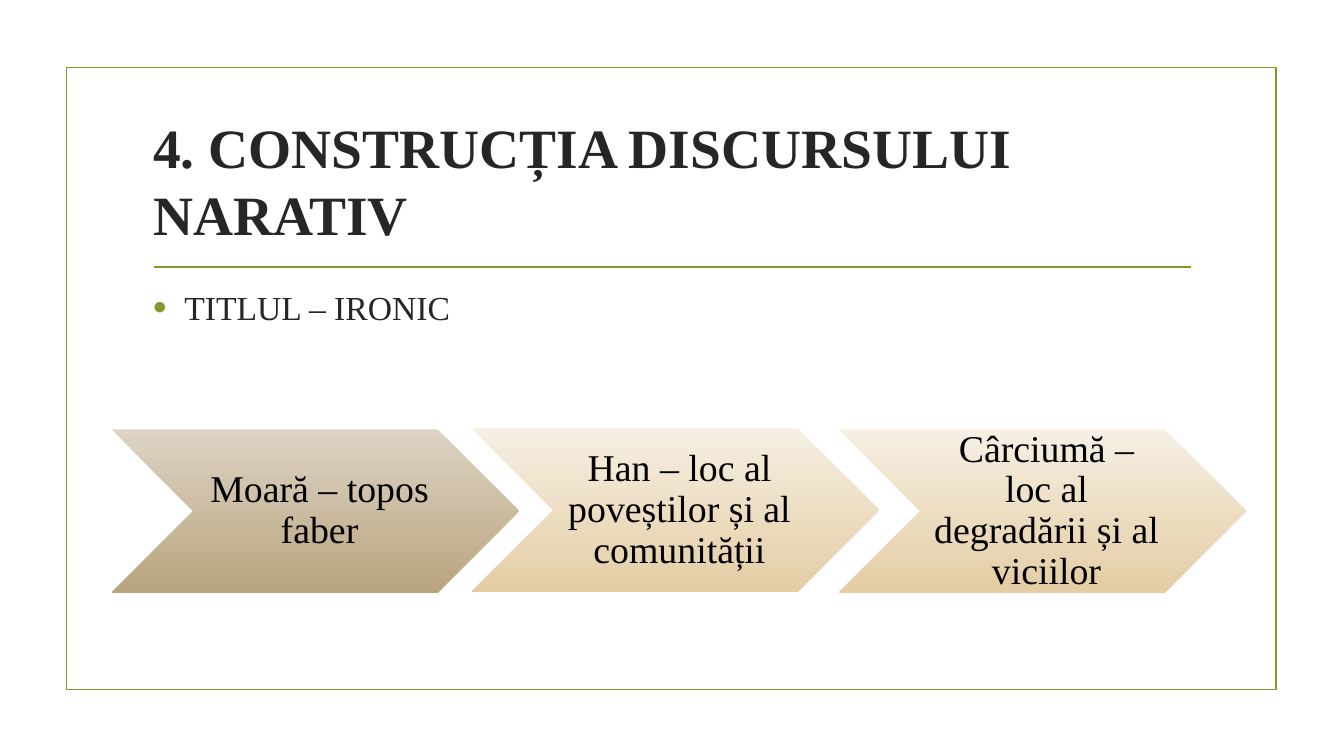
from lxml import etree
from pptx import Presentation
from pptx.dml.color import RGBColor
from pptx.enum.shapes import MSO_CONNECTOR, MSO_SHAPE
from pptx.enum.text import MSO_ANCHOR, PP_ALIGN
from pptx.oxml.ns import qn
from pptx.util import Inches, Pt

MIDDLE, TOP = MSO_ANCHOR.MIDDLE, MSO_ANCHOR.TOP
LEFT, CENTER = PP_ALIGN.LEFT, PP_ALIGN.CENTER
FONT = "Times New Roman"
GREEN, DARK, BLACK = "83992A", "262626", "000000"
TEXT_LEFT, TEXT_WIDTH = 1.42, 10.5
CHEVRON_WIDTH, CHEVRON_HEIGHT = 4.04, 1.62


def color(value):
    return RGBColor.from_string(value)


def write(shape, text, size, text_color, anchor, align, bold=False):
    frame = shape.text_frame
    frame.word_wrap = True
    frame.vertical_anchor = anchor
    frame.text = text
    paragraph = frame.paragraphs[0]
    paragraph.alignment = align
    font = paragraph.runs[0].font
    font.name, font.size, font.bold = FONT, Pt(size), bold
    font.color.rgb = color(text_color)
    return paragraph


presentation = Presentation()
presentation.slide_width = Inches(13.33)
presentation.slide_height = Inches(7.5)
slide = presentation.slides.add_slide(presentation.slide_layouts[6])
shapes = slide.shapes

border = shapes.add_shape(MSO_SHAPE.RECTANGLE, Inches(0.66), Inches(0.67), Inches(12), Inches(6.17))
border.shadow.inherit = False
border.fill.background()

divider = shapes.add_connector(MSO_CONNECTOR.STRAIGHT, Inches(1.53), Inches(2.65), Inches(11.81), Inches(2.65))
etree.SubElement(divider._element.spPr, qn("a:effectLst"))

for outlined in (border, divider):
    outlined.line.color.rgb = color(GREEN)
    outlined.line.width = Pt(1.25)

title = shapes.add_textbox(Inches(TEXT_LEFT), Inches(1.07), Inches(TEXT_WIDTH), Inches(1.43))
write(title, "4. CONSTRUCȚIA DISCURSULUI NARATIV", 39.6, DARK, MIDDLE, LEFT, True)

body = shapes.add_textbox(Inches(TEXT_LEFT), Inches(2.8), Inches(TEXT_WIDTH), Inches(3.63))
paragraph = write(body, "TITLUL – IRONIC", 24, DARK, TOP, LEFT)
paragraph.space_after = Pt(6)
properties = paragraph._p.get_or_add_pPr()
properties.set("marL", str(Inches(0.31)))
properties.set("indent", str(-Inches(0.31)))
bullet_color = etree.SubElement(properties, qn("a:buClr"))
etree.SubElement(bullet_color, qn("a:srgbClr"), val=GREEN)
etree.SubElement(properties, qn("a:buSzPct"), val="115000")
etree.SubElement(properties, qn("a:buFont"), typeface="Arial")
etree.SubElement(properties, qn("a:buChar"), char="•")

places = [
    ("Moară – topos faber", 1.11, 4.26, "DDD4C5", "B9A47E"),
    ("Han – loc al poveștilor și al comunității", 4.68, 4.25, "F6EFE3", "E4CDA4"),
    ("Cârciumă – loc al degradării și al viciilor", 8.32, 4.26, "F6EFE3", "E4CDA4"),
]
for text, left, top, light, deep in places:
    chevron = shapes.add_shape(
        MSO_SHAPE.CHEVRON, Inches(left), Inches(top), Inches(CHEVRON_WIDTH), Inches(CHEVRON_HEIGHT)
    )
    chevron.shadow.inherit = False
    chevron.line.fill.background()
    chevron.fill.gradient()
    chevron.fill.gradient_angle = 270
    for stop, position, shade in zip(chevron.fill.gradient_stops, (0, 1), (light, deep)):
        stop.position = position
        stop.color.rgb = color(shade)
    frame = chevron.text_frame
    frame.margin_left = Inches(0.12)
    frame.margin_top = frame.margin_right = frame.margin_bottom = Inches(0.04)
    paragraph = write(chevron, text, 27, BLACK, MIDDLE, CENTER)
    paragraph.line_spacing = 0.9

presentation.save("out.pptx")
